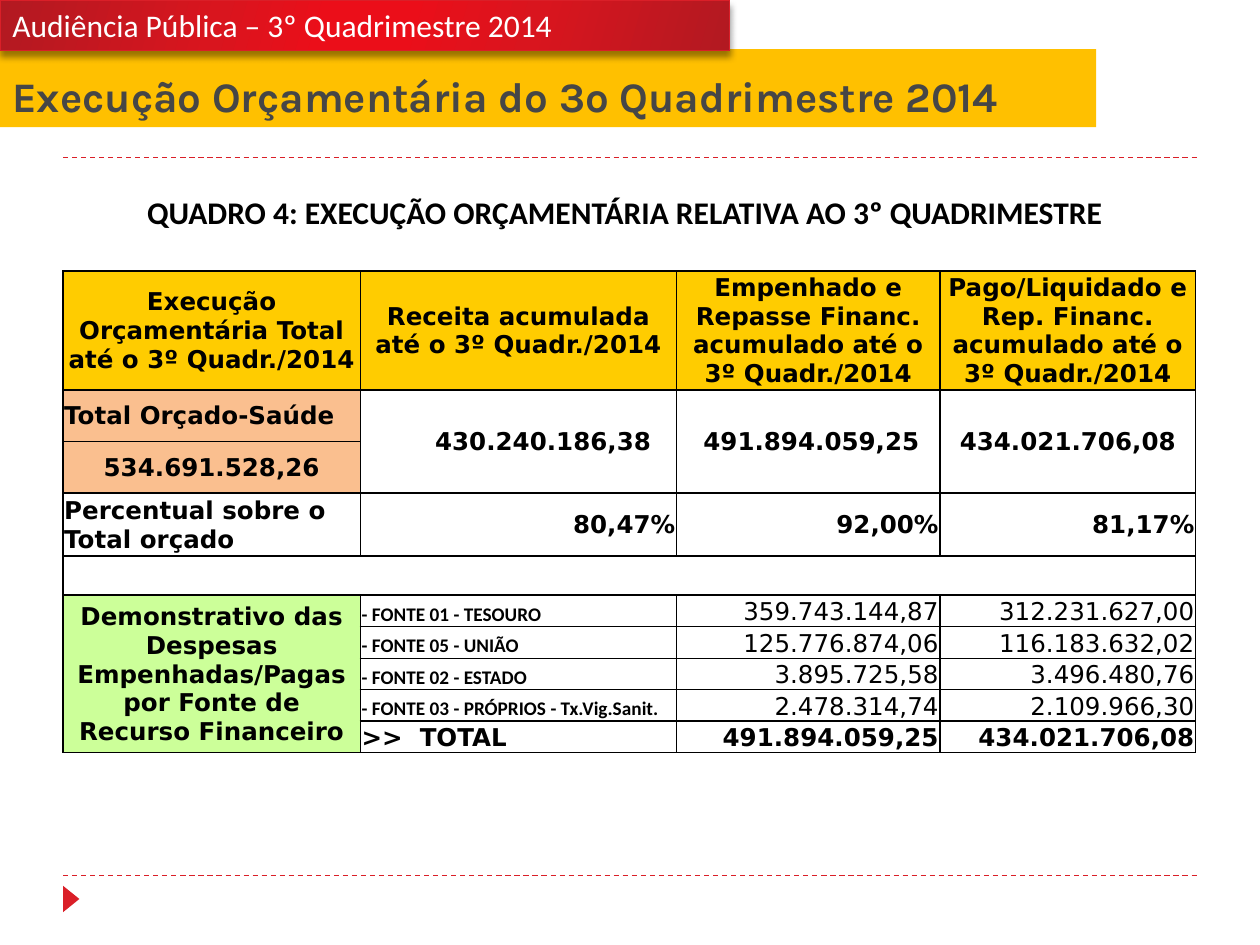
from lxml import etree
from pptx import Presentation
from pptx.dml.color import RGBColor
from pptx.enum import dml, shapes, text
from pptx.oxml.ns import qn
from pptx.util import Inches, Pt

COLORS = {
    "red": "DA1F28", "amber": "FFC000", "gray": "464646", "black": "000000",
    "white": "FFFFFF", "header": "FFCC00", "orange": "FABF8F", "green": "CCFF99",
}
BANNER_STOPS = [(0, "B21921"), (30, "D9151E"), (45, "EB0E19"),
                (55, "EB0E19"), (73, "D9151E"), (100, "B21921")]
ALIGN = {"l": text.PP_ALIGN.LEFT, "c": text.PP_ALIGN.CENTER, "r": text.PP_ALIGN.RIGHT}
ANCHOR = {"t": text.MSO_ANCHOR.TOP, "m": text.MSO_ANCHOR.MIDDLE, "b": text.MSO_ANCHOR.BOTTOM}

COLUMNS = [2.36, 2.51, 2.09, 2.03]
ROWS = [0.94, 0.41, 0.41, 0.5, 0.19] + [0.25] * 5
HEADERS = [
    "Execução Orçamentária Total até o 3º Quadr./2014",
    "Receita acumulada até o 3º Quadr./2014",
    "Empenhado e Repasse Financ. acumulado até o 3º Quadr./2014",
    "Pago/Liquidado e Rep. Financ. acumulado até o 3º Quadr./2014",
]
TOTALS = [("430.240.186,38", 0.4), ("491.894.059,25", 0.06), ("434.021.706,08", 0.01)]
PERCENTAGES = ["80,47%", "92,00%", "81,17%"]
SPACER_ROW, FIRST_SOURCE_ROW, TOTAL_ROW = 4, 5, 9
SOURCES = [
    ("- FONTE 01 - TESOURO", "359.743.144,87", "312.231.627,00"),
    ("- FONTE 05 - UNIÃO", "125.776.874,06", "116.183.632,02"),
    ("- FONTE 02 - ESTADO", "3.895.725,58", "3.496.480,76"),
    ("- FONTE 03 - PRÓPRIOS - Tx.Vig.Sanit.", "2.478.314,74", "2.109.966,30"),
    (">>  TOTAL", "491.894.059,25", "434.021.706,08"),
]


def rgb(name):
    """Return the named colour."""
    return RGBColor.from_string(COLORS[name])


def add_node(parent, tag, **attributes):
    """Append a DrawingML element and return it."""
    return etree.SubElement(parent, qn(tag), {key: str(value) for key, value in attributes.items()})


def write_text(frame, content, size=14, font="DejaVu Sans", color="black", bold=True, align="l"):
    """Write one formatted paragraph into a text frame."""
    frame.word_wrap = True
    paragraph = frame.paragraphs[0]
    paragraph.alignment = ALIGN[align]
    run = paragraph.add_run()
    run.text = content
    run.font.size, run.font.name, run.font.bold = Pt(size), font, bold
    run.font.color.rgb = rgb(color)


class SlideBuilder:
    """Hold the style and the current slide."""

    def __init__(self, slide):
        self.slide = slide
        self.line_width = 0.75
        self.cell_margin = 0.01

    def divider(self, top):
        """Draw a dashed rule across the slide."""
        line = self.slide.shapes.add_connector(
            shapes.MSO_CONNECTOR.STRAIGHT, Inches(0.5), Inches(top), Inches(9.5), Inches(top))
        line.line.color.rgb = rgb("red")
        line.line.width = Pt(self.line_width)
        line.line.dash_style = dml.MSO_LINE.DASH
        add_node(line._element.spPr, "a:effectLst")

    def shape(self, kind, left, top, width, height, fill, anchor="t"):
        """Draw a plain filled shape."""
        shape = self.slide.shapes.add_shape(
            kind, Inches(left), Inches(top), Inches(width), Inches(height))
        shape.shadow.inherit = False
        shape.fill.solid()
        shape.fill.fore_color.rgb = rgb(fill)
        shape.line.fill.background()
        shape.text_frame.vertical_anchor = ANCHOR[anchor]
        return shape

    def banner(self, left, top, width, height):
        """Draw a gradient bar with a soft shadow."""
        shape = self.shape(shapes.MSO_SHAPE.RECTANGLE, left, top, width, height, "red")
        shape.line.color.rgb = rgb("red")
        shape.line.width = Pt(self.line_width)
        shape.fill.gradient()
        shape.fill.gradient_angle = 344
        properties = shape._element.spPr
        stops = properties.find(qn("a:gradFill")).find(qn("a:gsLst"))
        for stop in list(stops):
            stops.remove(stop)
        for position, color in BANNER_STOPS:
            add_node(add_node(stops, "a:gs", pos=position * 1000), "a:srgbClr", val=color)
        shadow = add_node(properties.find(qn("a:effectLst")), "a:outerShdw", blurRad=Pt(4),
                          dist=Pt(3.4), dir=5400000, algn="ctr", rotWithShape=0)
        add_node(add_node(shadow, "a:srgbClr", val=COLORS["black"]), "a:alpha", val=40000)
        return shape

    def text_box(self, left, top, width, height, content, **style):
        """Add a text box."""
        box = self.slide.shapes.add_textbox(
            Inches(left), Inches(top), Inches(width), Inches(height))
        write_text(box.text_frame, content, **style)

    def table(self, left, top, columns, rows):
        """Add a table with no banding."""
        table = self.slide.shapes.add_table(
            len(rows), len(columns), Inches(left), Inches(top),
            Inches(sum(columns)), Inches(sum(rows))).table
        table.first_row = table.horz_banding = False
        for column, width in zip(table.columns, columns):
            column.width = Inches(width)
        for row, height in zip(table.rows, rows):
            row.height = Inches(height)
        return table

    def borders(self, cell, left=1, right=1, top=1, bottom=1):
        """Set the border widths of a cell, with 0 for none."""
        properties = cell._tc.get_or_add_tcPr()
        for side, width in zip("LRTB", (left, right, top, bottom)):
            line = add_node(properties, f"a:ln{side}", w=Pt(width))
            if width:
                add_node(add_node(line, "a:solidFill"), "a:srgbClr", val=COLORS["black"])
            else:
                add_node(line, "a:noFill")

    def cell(self, cell, content, fill="white", anchor="m", margin_left=None, **style):
        """Fill a cell and write its text."""
        cell.fill.solid()
        cell.fill.fore_color.rgb = rgb(fill)
        cell.vertical_anchor = ANCHOR[anchor]
        cell.margin_left = Inches(margin_left or self.cell_margin)
        cell.margin_right = cell.margin_top = Inches(self.cell_margin)
        cell.margin_bottom = 0
        write_text(cell.text_frame, content, **style)


def add_budget_table(builder):
    """Build the budget execution table."""
    table = builder.table(0.5, 2.15, COLUMNS, ROWS)
    last_column = len(COLUMNS) - 1
    for row in range(len(ROWS)):
        for column in range(len(COLUMNS)):
            widths = {}
            if row == SPACER_ROW:
                widths = {"left": int(column == 0), "right": int(column == last_column)}
            elif FIRST_SOURCE_ROW <= row < TOTAL_ROW and column:
                widths = {"top": 1 if row == FIRST_SOURCE_ROW else 0.5,
                          "bottom": 1 if row == TOTAL_ROW - 1 else 0.5}
            builder.borders(table.cell(row, column), **widths)
    for column in range(1, len(COLUMNS)):
        table.cell(1, column).merge(table.cell(2, column))
    table.cell(FIRST_SOURCE_ROW, 0).merge(table.cell(TOTAL_ROW, 0))

    for column, header in enumerate(HEADERS):
        builder.cell(table.cell(0, column), header, fill="header", align="c")
        builder.cell(table.cell(SPACER_ROW, column), "", size=8)
    builder.cell(table.cell(1, 0), "Total Orçado-Saúde", fill="orange")
    builder.cell(table.cell(2, 0), "534.691.528,26", fill="orange", align="c")
    builder.cell(table.cell(3, 0), "Percentual sobre o Total orçado")
    for column, ((total, margin), percentage) in enumerate(zip(TOTALS, PERCENTAGES), 1):
        builder.cell(table.cell(1, column), total, align="c", margin_left=margin)
        builder.cell(table.cell(3, column), percentage, align="r")
    builder.cell(table.cell(FIRST_SOURCE_ROW, 0),
                 "Demonstrativo das Despesas Empenhadas/Pagas por Fonte de Recurso Financeiro",
                 fill="green", align="c")
    for row, (label, *amounts) in enumerate(SOURCES, FIRST_SOURCE_ROW):
        is_total = row == TOTAL_ROW
        label_style = {} if is_total else {"size": 11, "font": "Calibri"}
        builder.cell(table.cell(row, 1), label, anchor="b", **label_style)
        for column, amount in enumerate(amounts, 2):
            builder.cell(table.cell(row, column), amount, anchor="b", align="r", bold=is_total)


def main():
    """Build and save the presentation."""
    presentation = Presentation()
    presentation.slide_width, presentation.slide_height = Inches(10), Inches(7.5)
    builder = SlideBuilder(presentation.slides.add_slide(presentation.slide_layouts[6]))
    for top in (6.95, 1.25):
        builder.divider(top)
    marker = builder.shape(shapes.MSO_SHAPE.ISOSCELES_TRIANGLE, 0.46, 7.07, 0.21, 0.13, "red")
    marker.rotation = 90
    builder.text_box(0.86, 1.48, 8.2, 0.4,
                     "QUADRO 4: EXECUÇÃO ORÇAMENTÁRIA RELATIVA AO 3º QUADRIMESTRE",
                     size=18, font="Calibri", align="c")
    title = builder.shape(shapes.MSO_SHAPE.RECTANGLE, 0, 0.39, 8.7, 0.62, "amber", anchor="b")
    write_text(title.text_frame, "Execução Orçamentária do 3º Quadrimestre 2014",
               size=24, font="Karla", color="gray")
    banner = builder.banner(0, 0, 5.79, 0.4)
    write_text(banner.text_frame, "Audiência Pública – 3º Quadrimestre 2014",
               size=18, font="Calibri", color="white", bold=False)
    add_budget_table(builder)
    presentation.save("out.pptx")


if __name__ == "__main__":
    main()
